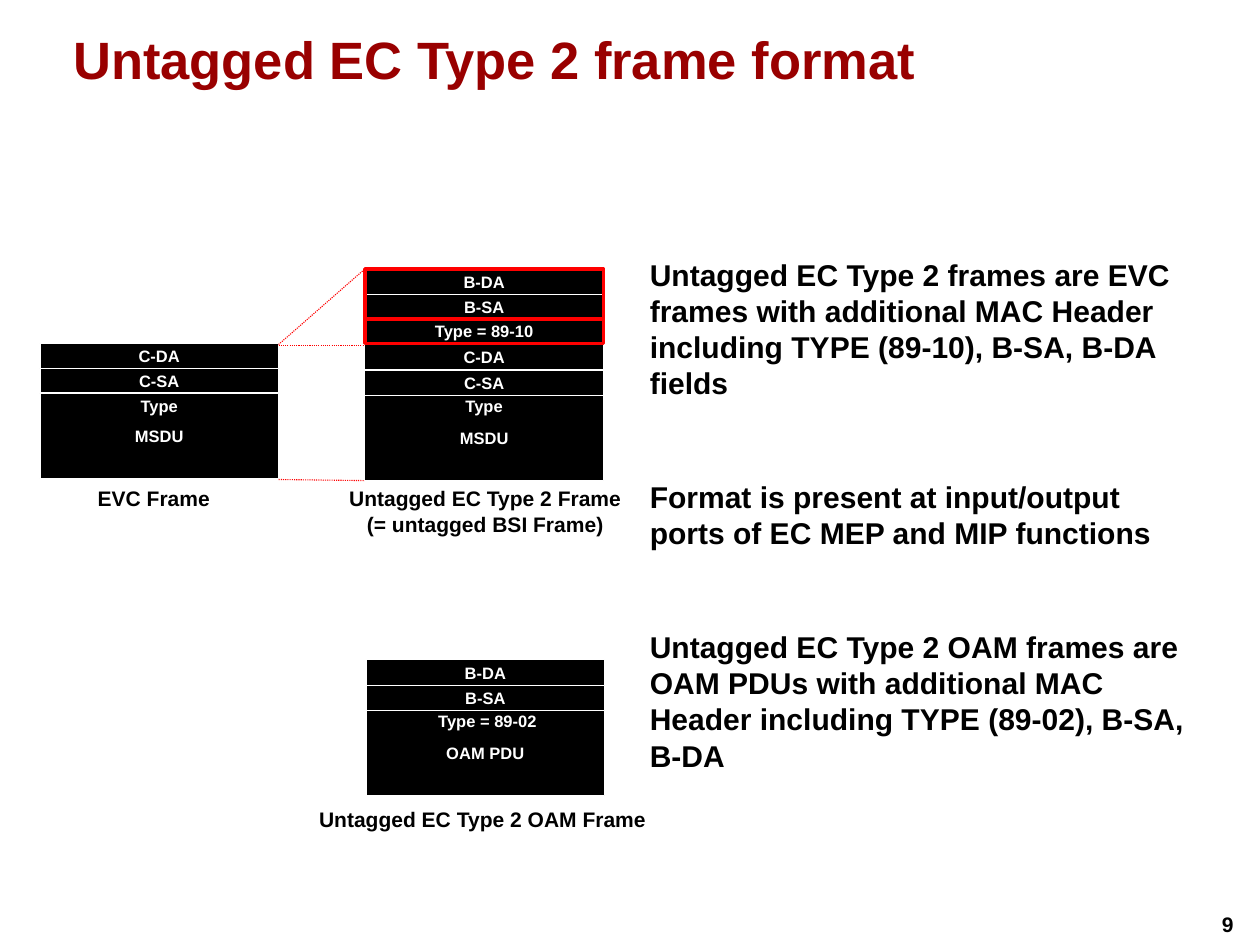
from dataclasses import dataclass

from pptx import Presentation
from pptx.dml.color import RGBColor
from pptx.enum.dml import MSO_LINE
from pptx.enum.shapes import MSO_CONNECTOR, MSO_SHAPE
from pptx.enum.text import MSO_ANCHOR, PP_ALIGN
from pptx.oxml.ns import qn
from pptx.util import Inches, Pt


@dataclass(frozen=True)
class Theme:
    font: str = "Arial"
    title: RGBColor = RGBColor(0x99, 0x00, 0x00)
    dark: RGBColor = RGBColor(0x00, 0x00, 0x00)
    light: RGBColor = RGBColor(0xFF, 0xFF, 0xFF)
    accent: RGBColor = RGBColor(0xFF, 0x00, 0x00)
    title_size: int = 35
    body_size: int = 20
    caption_size: int = 14
    field_size: int = 11
    thin: float = 0.75
    thick: float = 2.25


THEME = Theme()
FIELD_W = 2.21
PAYLOAD_H = 0.79
EVC_X, EVC_TOP = 0.37, 3.18
EC_X, EC_TOP = 3.38, 2.49
OAM_X, OAM_TOP = 3.39, 6.11
POINTS = [
    "Untagged EC Type 2 frames are EVC frames with additional MAC Header "
    "including TYPE (89-10), B-SA, B-DA fields",
    "Format is present at input/output ports of EC MEP and MIP functions",
    "Untagged EC Type 2 OAM frames are OAM PDUs with additional MAC Header "
    "including TYPE (89-02), B-SA, B-DA",
]


def write(sp, *texts, size, color=THEME.dark, align=PP_ALIGN.LEFT,
          anchor=MSO_ANCHOR.TOP, wrap=True, inset=(0.1, 0.05), gap=0):
    tf = sp.text_frame
    tf.word_wrap = wrap
    tf.vertical_anchor = anchor
    tf.margin_left = tf.margin_right = Inches(inset[0])
    tf.margin_top = tf.margin_bottom = Inches(inset[1])
    for i, text in enumerate(texts):
        p = tf.add_paragraph() if i else tf.paragraphs[0]
        p.text = text
        p.alignment = align
        p.space_before = Pt(gap if i else 0)
        for r in p.runs:
            r.font.name = THEME.font
            r.font.size = Pt(size)
            r.font.bold = True
            r.font.color.rgb = color


def add_text(s, x, y, w, h, *texts, **fmt):
    sp = s.shapes.add_textbox(Inches(x), Inches(y), Inches(w), Inches(h))
    write(sp, *texts, **fmt)


def add_caption(s, x, y, w, h, text):
    add_text(s, x, y, w, h, text, size=THEME.caption_size,
             align=PP_ALIGN.CENTER, wrap=False)


def write_field(sp, text):
    write(sp, text, size=THEME.field_size, color=THEME.light,
          align=PP_ALIGN.CENTER, anchor=MSO_ANCHOR.MIDDLE, wrap=False,
          inset=(0.09, 0.04))


def add_box(s, x, y, h, text=None, line=THEME.light, weight=THEME.thin):
    sp = s.shapes.add_shape(MSO_SHAPE.RECTANGLE, Inches(x), Inches(y),
                            Inches(FIELD_W), Inches(h))
    sp.shadow.inherit = False
    sp.line.color.rgb = line
    sp.line.width = Pt(weight)
    if text:
        sp.fill.solid()
        sp.fill.fore_color.rgb = THEME.dark
        write_field(sp, text)
    else:
        sp.fill.background()


def add_frame(s, x, top, payload_top, fields, type_text, payload, shift=0.0):
    row_h = (payload_top - top) / len(fields)
    add_box(s, x, payload_top, PAYLOAD_H, payload)
    for i, field in enumerate(fields):
        if field:
            add_box(s, x, top + i * row_h, row_h, field)
    sp = s.shapes.add_textbox(Inches(x + shift), Inches(payload_top - shift),
                              Inches(FIELD_W), Inches(row_h))
    write_field(sp, type_text)


def add_guide(s, x1, y1, x2, y2):
    c = s.shapes.add_connector(MSO_CONNECTOR.STRAIGHT, Inches(x1), Inches(y1),
                               Inches(x2), Inches(y2))
    c.line.color.rgb = THEME.accent
    c.line.width = Pt(THEME.thin)
    c.line.dash_style = MSO_LINE.ROUND_DOT
    props = c._element.spPr
    props.append(props.makeelement(qn("a:effectLst"), {}))


def main():
    prs = Presentation()
    prs.slide_width, prs.slide_height = Inches(11.67), Inches(8.75)
    s = prs.slides.add_slide(prs.slide_layouts[6])

    add_text(s, 11.22, 8.39, 0.44, 0.34, "9", size=THEME.caption_size)
    add_text(s, 0.58, 0.2, 10.5, 1.1, "Untagged EC Type 2 frame format",
             size=THEME.title_size, color=THEME.title)
    add_text(s, 5.92, 2.33, 5.17, 5.77, *POINTS, size=THEME.body_size, gap=52)

    add_frame(s, EVC_X, EVC_TOP, 3.64, ["C-DA", "C-SA"], "Type", "MSDU")
    add_caption(s, 0.8, 4.45, 1.25, 0.34, "EVC Frame")

    evc_right = EVC_X + FIELD_W
    for evc_y, ec_y in [(4.44, 4.45), (3.2, 3.2), (3.19, EC_TOP)]:
        add_guide(s, evc_right, evc_y, EC_X, ec_y)

    add_frame(s, EC_X, EC_TOP, 3.66, ["B-DA", "B-SA", None, "C-DA", "C-SA"],
              "Type ", "MSDU", shift=0.02)
    add_box(s, EC_X, 2.95, 0.23, "Type = 89-10", THEME.accent, THEME.thick)
    add_box(s, EC_X, EC_TOP, 0.47, line=THEME.accent, weight=THEME.thick)
    add_caption(s, 3.08, 4.45, 2.83, 0.57,
                "Untagged EC Type 2 Frame\n(= untagged BSI Frame)")

    add_frame(s, OAM_X, OAM_TOP, 6.58, ["B-DA", "B-SA"],
              "Type = 89-02", "OAM PDU", shift=0.02)
    add_caption(s, 2.85, 7.42, 3.24, 0.34, "Untagged EC Type 2 OAM Frame")

    prs.save("out.pptx")


if __name__ == "__main__":
    main()
